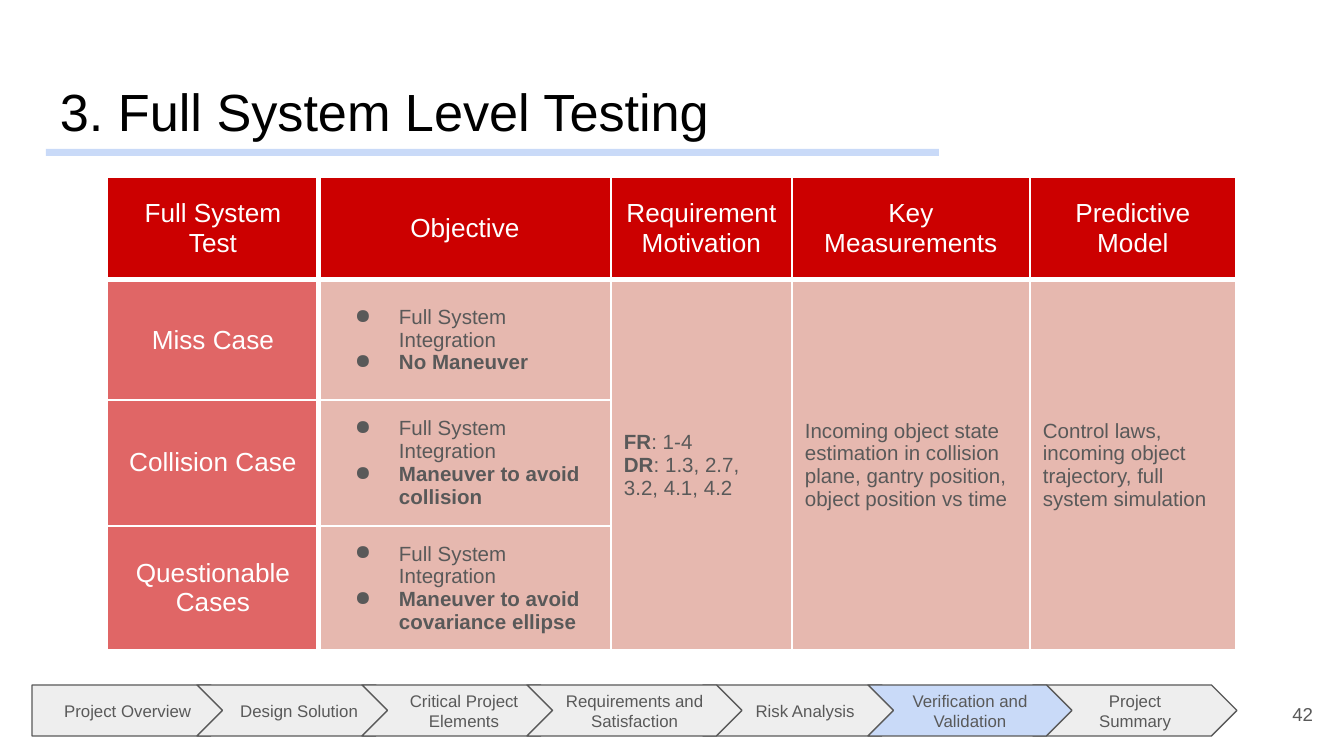
from dataclasses import dataclass
from itertools import accumulate

from lxml.etree import SubElement
from pptx import Presentation
from pptx.dml.color import RGBColor
from pptx.enum.shapes import MSO_SHAPE
from pptx.enum.text import MSO_ANCHOR, PP_ALIGN
from pptx.oxml.ns import qn
from pptx.util import Pt

PX = 914400 / 134.4  # EMU in one px


@dataclass(frozen=True)
class Theme:
    font: str = "Arial"
    black: str = "000000"
    white: str = "FFFFFF"
    grey: str = "595959"
    step: str = "EEEEEE"
    accent: str = "C9DAF8"
    header: str = "CC0000"
    case: str = "E06666"
    body: str = "E6B8AF"
    title_size: int = 28
    head_size: int = 14
    body_size: int = 11
    number_size: int = 10
    step_size: int = 9
    thin: float = 1.5
    thick: float = 3


THEME = Theme()

TITLE = "3. Full System Level Testing"
PAGE_NUMBER = "42"

STEPS = ["Project Overview", "Design Solution", "Critical Project Elements",
         "Requirements and Satisfaction", "Risk Analysis",
         "Verification and Validation", "Project Summary"]
CURRENT_STEP = 5
STEP_WIDTHS = [204, 204, 204, 215, 204, 204, 204]
STEP_OVERLAP = 39
STACKING = [0, 1, 2, 6, 4, 3, 5]  # back to front

HEADERS = ["Full System Test", "Objective", "Requirement Motivation",
           "Key Measurements", "Predictive Model"]
CASES = [("Miss Case", "No Maneuver"),
         ("Collision Case", "Maneuver to avoid collision"),
         ("Questionable Cases", "Maneuver to avoid covariance ellipse")]
SHARED_OBJECTIVE = "Full System Integration"
# Each paragraph is a list of (text, bold) runs.
SHARED_CELLS = [
    [[("FR", True), (": 1-4", False)],
     [("DR", True), (": 1.3, 2.7, 3.2, 4.1, 4.2", False)]],
    [[("Incoming object state estimation in collision plane, gantry position, "
       "object position vs time", False)]],
    [[("Control laws, incoming object trajectory, full system simulation", False)]],
]
COLUMN_WIDTHS = [212, 292, 181, 238, 206]
ROW_HEIGHTS = [103, 120, 126, 110]


def px(length):
    return round(length * PX)


def box(*lengths):
    return [px(length) for length in lengths]


def rgb(colour):
    return RGBColor.from_string(colour)


def plain(text):
    return [[(text, False)]]


def set_margins(target, prefix=""):
    for side in ("left", "top", "right", "bottom"):
        setattr(target, f"{prefix}margin_{side}", px(13))


def add_bullet(paragraph):
    properties = paragraph._p.get_or_add_pPr()
    properties.set("marL", str(px(67)))
    properties.set("indent", str(px(-44)))
    colour = SubElement(properties, qn("a:buClr"))
    SubElement(colour, qn("a:srgbClr"), val=THEME.grey)
    SubElement(properties, qn("a:buChar"), char="●")


def write(frame, paragraphs, size, colour, align=PP_ALIGN.LEFT, bulleted=False):
    for index, runs in enumerate(paragraphs):
        paragraph = frame.add_paragraph() if index else frame.paragraphs[0]
        paragraph.alignment = align
        if bulleted:
            add_bullet(paragraph)
        for text, bold in runs:
            run = paragraph.add_run()
            run.text = text
            run.font.color.rgb = rgb(colour)
            for name, value in {"name": THEME.font, "size": Pt(size), "bold": bold}.items():
                setattr(run.font, name, value)


def fill_frame(shape, text, size, colour, align, anchor):
    frame = shape.text_frame
    frame.word_wrap = True
    frame.vertical_anchor = anchor
    set_margins(frame)
    write(frame, plain(text), size, colour, align)


def add_filled(slide, kind, bounds, colour):
    shape = slide.shapes.add_shape(kind, *box(*bounds))
    shape.shadow.inherit = False
    shape.fill.solid()
    shape.fill.fore_color.rgb = rgb(colour)
    return shape


def add_steps(slide):
    lefts = list(accumulate((width - STEP_OVERLAP for width in STEP_WIDTHS), initial=32))
    for index in STACKING:
        kind = MSO_SHAPE.CHEVRON if index else MSO_SHAPE.PENTAGON
        colour = THEME.accent if index == CURRENT_STEP else THEME.step
        step = add_filled(slide, kind, (lefts[index], 685, STEP_WIDTHS[index], 51), colour)
        step.line.color.rgb = rgb(THEME.grey)
        step.line.width = Pt(0.75)
        fill_frame(step, STEPS[index], THEME.step_size, THEME.grey,
                   PP_ALIGN.CENTER, MSO_ANCHOR.MIDDLE)


def style_cell(cell, row, column, colour):
    """Heavy rules go below the header row and right of the first column."""
    heavy = {"L": column == 1, "R": column == 0, "T": row == 1, "B": row == 0}
    properties = cell._tc.get_or_add_tcPr()
    for side, is_heavy in heavy.items():
        width = Pt(THEME.thick if is_heavy else THEME.thin)
        line = SubElement(properties, qn(f"a:ln{side}"), w=str(width))
        SubElement(SubElement(line, qn("a:solidFill")), qn("a:srgbClr"), val=THEME.white)
    cell.fill.solid()
    cell.fill.fore_color.rgb = rgb(colour)
    cell.vertical_anchor = MSO_ANCHOR.MIDDLE
    set_margins(cell)


def add_test_table(slide):
    bounds = box(107, 177, sum(COLUMN_WIDTHS), sum(ROW_HEIGHTS))
    table = slide.shapes.add_table(len(ROW_HEIGHTS), len(COLUMN_WIDTHS), *bounds).table
    table.first_row = table.horz_banding = False
    for column, width in zip(table.columns, COLUMN_WIDTHS):
        column.width = px(width)
    for row, height in zip(table.rows, ROW_HEIGHTS):
        row.height = px(height)
    for row in range(len(ROW_HEIGHTS)):
        for column in range(len(COLUMN_WIDTHS)):
            colour = THEME.header if row == 0 else THEME.body if column else THEME.case
            style_cell(table.cell(row, column), row, column, colour)

    heading = (THEME.head_size, THEME.white, PP_ALIGN.CENTER)
    body = (THEME.body_size, THEME.grey)
    for column, header in enumerate(HEADERS):
        write(table.cell(0, column).text_frame, plain(header), *heading)
    for row, (case, objective) in enumerate(CASES, 1):
        write(table.cell(row, 0).text_frame, plain(case), *heading)
        write(table.cell(row, 1).text_frame,
              [[(SHARED_OBJECTIVE, False)], [(objective, True)]], *body, bulleted=True)
    for column, paragraphs in enumerate(SHARED_CELLS, 2):
        table.cell(1, column).merge(table.cell(len(CASES), column))
        write(table.cell(1, column).text_frame, paragraphs, *body)


def main():
    deck = Presentation()
    deck.slide_width, deck.slide_height = box(1344, 756)
    slide = deck.slides.add_slide(deck.slide_layouts[6])
    add_steps(slide)
    underline = add_filled(slide, MSO_SHAPE.RECTANGLE, (46, 149, 893, 7), THEME.accent)
    underline.line.fill.background()
    title = slide.shapes.add_textbox(*box(47, 66, 890, 85))
    fill_frame(title, TITLE, THEME.title_size, THEME.black, PP_ALIGN.LEFT, MSO_ANCHOR.TOP)
    number = slide.shapes.add_textbox(*box(1246, 685, 80, 58))
    fill_frame(number, PAGE_NUMBER, THEME.number_size, THEME.grey,
               PP_ALIGN.RIGHT, MSO_ANCHOR.MIDDLE)
    add_test_table(slide)
    deck.save("out.pptx")


if __name__ == "__main__":
    main()
